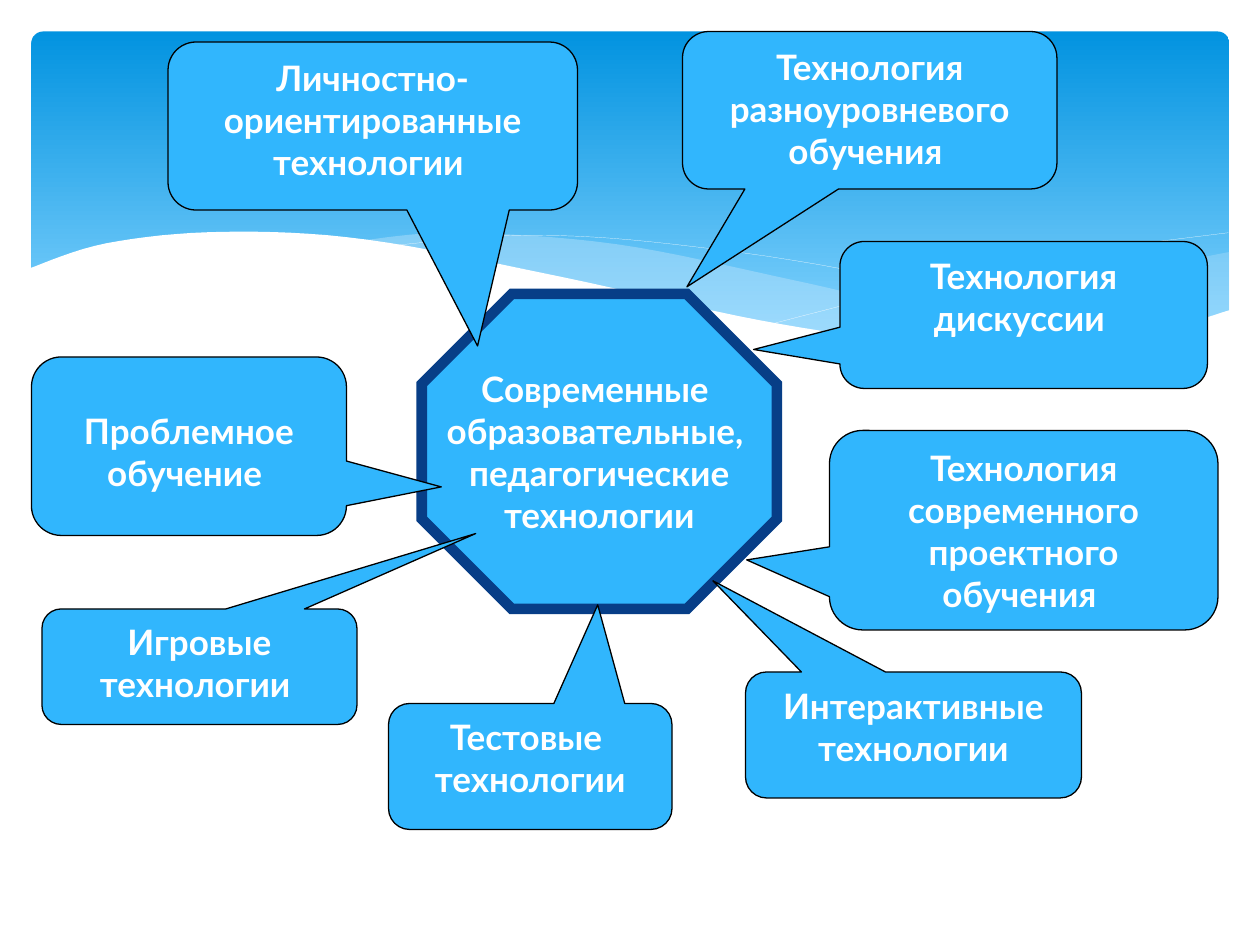
import pptx
import pptx.util
import pptx.dml.color
import pptx.enum.shapes
import pptx.enum.text
import lxml.etree

Pt = pptx.util.Pt
RGB = pptx.dml.color.RGBColor
KIND = pptx.enum.shapes.MSO_SHAPE
ANCHOR = pptx.enum.text.MSO_ANCHOR
qn = pptx.oxml.ns.qn

SKY = RGB(0x31, 0xB6, 0xFD)
DEEP = RGB(0x02, 0x93, 0xE0)
PALE = RGB(0x83, 0xD3, 0xFE)
MIST = RGB(0xC6, 0xE7, 0xFC)
NAVY = RGB(0x07, 0x3E, 0x87)
WHITE = RGB(0xFF, 0xFF, 0xFF)
BLACK = RGB(0, 0, 0)

STEPS = 8
GRAIN = 20
INSET = 3.6
LEAD = 21.6
ROUND = 0.167


def paint(shape, fill, edge, width):
    shape.shadow.inherit = False
    if fill is None:
        shape.fill.background()
    else:
        shape.fill.solid()
        shape.fill.fore_color.rgb = fill
    if edge is None:
        shape.line.fill.background()
    else:
        shape.line.color.rgb = edge
        shape.line.width = Pt(width)


def curve(knots):
    pad = [knots[0], *knots, knots[-1]]
    points = []
    for a, b, c, d in zip(pad, pad[1:], pad[2:], pad[3:]):
        for step in range(STEPS):
            t = step / STEPS
            points.append([
                GRAIN * (q + t * (r - p + t * (2 * p - 5 * q + 4 * r - s
                         + t * (3 * q - p - 3 * r + s))) / 2)
                for p, q, r, s in zip(a, b, c, d)])
    return points + [[GRAIN * n for n in knots[-1]]]


deck = pptx.Presentation()
deck.slide_width, deck.slide_height = Pt(720), Pt(540)
slide = deck.slides.add_slide(deck.slide_layouts[6])
shapes = slide.shapes

band = shapes.add_shape(KIND.ROUNDED_RECTANGLE, Pt(18), Pt(18), Pt(684.5), Pt(194.5))
band.adjustments[0] = 0.034
paint(band, DEEP, None, 0)
band.fill.gradient()
band.fill.gradient_angle = 270
for stop, color, spot in zip(band.fill.gradient_stops, (DEEP, PALE), (0, 0.9)):
    stop.color.rgb = color
    stop.position = spot

right_top = [(476, 191), (542, 178.5), (620, 160.5), (702.5, 144)]
right_base = [(702.5, 178), (657.5, 192), (603.5, 200), (536.5, 198), (476, 191)]
mid_top = [(206, 137.5), (260, 133), (352, 139.5), (453, 160), (533.5, 178), (643, 196.5)]
mid_base = [(643, 196.5), (603.5, 200), (548, 199.5), (468, 190), (381.5, 173),
            (291, 152), (206, 137.5)]
crest = [(222.5, 140.5), (299.5, 134.5), (384, 139.5), (500.5, 157.5), (653, 196)]
rise = [(441.5, 185), (538.5, 160.5), (623.5, 143.5), (702, 133)]
front_top = [(16.5, 153.5), (61, 139), (127.5, 132.5), (210, 137), (322, 158.5),
             (434, 183), (522.5, 196), (592.5, 199.5), (647.5, 193.5), (703.5, 177)]
front_base = [(703.5, 237), (16.5, 237)]

waves = [
    (right_top, right_base, MIST, None, 29),
    (mid_top, mid_base, MIST, None, 40),
    (crest, None, None, WHITE, 100),
    (rise, None, None, WHITE, 100),
    (front_top, front_base, WHITE, None, 100),
]
for top, base, fill, edge, alpha in waves:
    points = curve(top) + (curve(base) if base else [])
    pen = shapes.build_freeform(*points[0], scale=Pt(1) / GRAIN)
    pen.add_line_segments(points[1:], close=base is not None)
    wave = pen.convert_to_shape()
    paint(wave, fill, edge, 0.1)
    if alpha < 100:
        tint = wave.element.spPr.find(".//" + qn("a:srgbClr"))
        lxml.etree.SubElement(tint, qn("a:alpha"), val=str(alpha * 1000))

core = shapes.add_shape(KIND.OCTAGON, Pt(241), Pt(168), Pt(203), Pt(180))
core.adjustments[0] = 0.286
paint(core, SKY, NAVY, 6)
lxml.etree.SubElement(core.element.spPr.find(qn("a:ln")), qn("a:miter"), lim="800000")
core.text_frame.word_wrap = False
core.text_frame.vertical_anchor = ANCHOR.MIDDLE
labels = [(core, ["Современные ", "образовательные, ", "педагогические", "технологии"])]

notes = [
    ((96, 24, 234, 96), (0.256, 1.309), 0, ["Личностно-ориентированные технологии "]),
    ((18, 204, 180, 102), (0.801, 0.228), LEAD, ["Проблемное обучение "]),
    ((24, 348, 180, 66), (0.877, -1.153), 0, ["Игровые технологии "]),
    ((474, 246, 222, 114), (-0.713, 0.149), 0,
     ["Технология современного проектного обучения "]),
    ((390, 18, 214, 90), (-0.488, 1.121), 0, ["Технология разноуровневого обучения "]),
    ((426, 384, 192, 72), (-0.597, -1.224), 0, ["Интерактивные технологии"]),
    ((480, 138, 210, 84), (-0.735, 0.235), 0, ["Технология дискуссии "]),
    ((222, 402, 162, 72), (0.238, -1.283), 0, ["Тестовые ", "технологии"]),
]
for box, tip, drop, lines in notes:
    note = shapes.add_shape(KIND.ROUNDED_RECTANGULAR_CALLOUT, *[Pt(n) for n in box])
    for i, value in enumerate((*tip, ROUND)):
        note.adjustments[i] = value
    paint(note, SKY, BLACK, 0.75)
    note.text_frame.word_wrap = True
    note.text_frame.vertical_anchor = ANCHOR.TOP
    note.text_frame.margin_top = Pt(INSET + drop)
    labels.append((note, lines))

for shape, lines in labels:
    frame = shape.text_frame
    for i, line in enumerate(lines):
        para = frame.add_paragraph() if i else frame.paragraphs[0]
        para.alignment = pptx.enum.text.PP_ALIGN.CENTER
        run = para.add_run()
        run.text = line
        run.font.name = "Lato"
        run.font.size = Pt(20)
        run.font.bold = True
        run.font.color.rgb = WHITE

deck.save("out.pptx")
